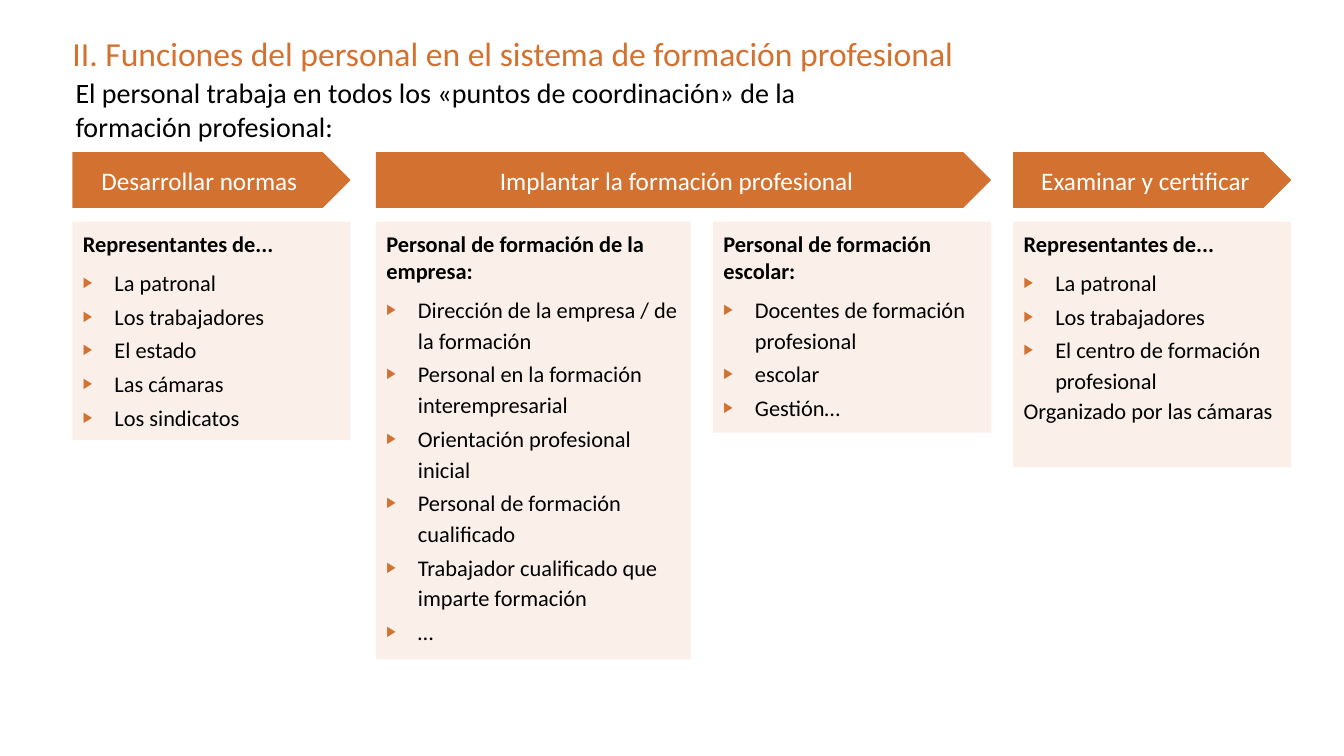
from dataclasses import dataclass

import pptx
import pptx.dml.color
import pptx.enum.shapes
import pptx.enum.text
import pptx.oxml
import pptx.oxml.ns
import pptx.util
from lxml import etree

PX = 9525  # EMU per px, 96 px to the inch
ANCHOR = pptx.enum.text.MSO_ANCHOR
ALIGN = pptx.enum.text.PP_ALIGN
AUTO_SIZE = pptx.enum.text.MSO_AUTO_SIZE


@dataclass(frozen=True)
class Theme:
    font: str = "Calibri"
    accent: str = "D37230"
    text: str = "000000"
    inverse: str = "FFFFFF"
    panel_alpha: int = 10
    title_size: int = 24
    subtitle_size: int = 20
    arrow_size: int = 18
    panel_size: int = 16
    list_spacing: int = 22
    bullet: str = "▶"
    bullet_percent: int = 65


THEME = Theme()

# Layout in px
LEFT = 69
ARROW_TOP, ARROW_HEIGHT = 145, 53
PANEL_TOP = 211
NARROW, WIDE = 265, 300
STAGE_GAP, GAP = 24, 21
COMPANY_LEFT = LEFT + NARROW + STAGE_GAP
SCHOOL_LEFT = COMPANY_LEFT + WIDE + GAP
EXAM_LEFT = SCHOOL_LEFT + NARROW + GAP
BULLET_INDENT = 30

# Left, width, label, left inset
ARROWS = [
    (LEFT, NARROW, "Desarrollar normas", 0),
    (COMPANY_LEFT, WIDE + GAP + NARROW, "Implantar la formación profesional", 10),
    (EXAM_LEFT, NARROW, "Examinar y certificar", 10),
]

# Left, width, height, heading, bullets, closing line
PANELS = [
    (LEFT, NARROW, 208, "Representantes de...",
     ["La patronal", "Los trabajadores", "El estado", "Las cámaras", "Los sindicatos"], None),
    (COMPANY_LEFT, WIDE, 417, "Personal de formación de la empresa:",
     ["Dirección de la empresa / de la formación",
      "Personal en la formación interempresarial",
      "Orientación profesional inicial",
      "Personal de formación cualificado",
      "Trabajador cualificado que imparte formación",
      "…"], None),
    (SCHOOL_LEFT, NARROW, 201, "Personal de formación escolar:",
     ["Docentes de formación profesional", "escolar", "Gestión…"], None),
    (EXAM_LEFT, NARROW, 234, "Representantes de...",
     ["La patronal", "Los trabajadores", "El centro de formación profesional"],
     "Organizado por las cámaras"),
]


def color(value):
    return pptx.dml.color.RGBColor.from_string(value)


def place(shape, box):
    shape.left, shape.top, shape.width, shape.height = (length * PX for length in box)


def set_frame(frame, insets, anchor):
    frame.word_wrap = True
    frame.auto_size = AUTO_SIZE.NONE
    frame.vertical_anchor = anchor
    (frame.margin_left, frame.margin_top,
     frame.margin_right, frame.margin_bottom) = (inset * PX for inset in insets)


def add_run(paragraph, text, size, text_color, bold=False):
    run = paragraph.add_run()
    run.text = text
    run.font.name = THEME.font
    run.font.size = pptx.util.Pt(size)
    run.font.bold = bold
    run.font.color.rgb = color(text_color)


def set_bullet(paragraph, visible):
    properties = paragraph._p.get_or_add_pPr()
    indent = BULLET_INDENT * PX if visible else 0
    properties.set("marL", str(indent))
    properties.set("indent", str(-indent))
    qn = pptx.oxml.ns.qn
    if not visible:
        etree.SubElement(properties, qn("a:buNone"))
        return
    bullet_color = etree.SubElement(properties, qn("a:buClr"))
    etree.SubElement(bullet_color, qn("a:srgbClr"), val=THEME.accent)
    etree.SubElement(properties, qn("a:buSzPct"), val=str(THEME.bullet_percent * 1000))
    etree.SubElement(properties, qn("a:buFont"), typeface=THEME.font)
    etree.SubElement(properties, qn("a:buChar"), char=THEME.bullet)


def add_title(slide, box, text):
    title = slide.shapes.title
    place(title, box)
    set_frame(title.text_frame, (0, 0, 0, 0), ANCHOR.TOP)
    paragraph = title.text_frame.paragraphs[0]
    paragraph.alignment = ALIGN.LEFT
    add_run(paragraph, text, THEME.title_size, THEME.accent)


def add_subtitle(slide, box, text):
    shape = slide.shapes.add_textbox(*(length * PX for length in box))
    set_frame(shape.text_frame, (10, 5, 10, 5), ANCHOR.TOP)
    add_run(shape.text_frame.paragraphs[0], text, THEME.subtitle_size, THEME.text)


def add_arrow(slide, box, label, left_inset):
    shape = slide.shapes.add_shape(
        pptx.enum.shapes.MSO_SHAPE.PENTAGON, *(length * PX for length in box))
    shape.shadow.inherit = False
    shape.fill.solid()
    shape.fill.fore_color.rgb = color(THEME.accent)
    shape.line.fill.background()
    set_frame(shape.text_frame, (left_inset, 5, 10, 5), ANCHOR.MIDDLE)
    paragraph = shape.text_frame.paragraphs[0]
    paragraph.alignment = ALIGN.CENTER
    add_run(paragraph, label, THEME.arrow_size, THEME.inverse)


def fill_panel(panel, box, heading, items, closing):
    place(panel, box)
    panel.fill.solid()
    panel.fill.fore_color.rgb = color(THEME.accent)
    tint = panel.fill._xPr.find(".//" + pptx.oxml.ns.qn("a:srgbClr"))
    etree.SubElement(tint, pptx.oxml.ns.qn("a:alpha"), val=str(THEME.panel_alpha * 1000))
    frame = panel.text_frame
    set_frame(frame, (10, 8, 10, 12), ANCHOR.TOP)

    # Text, whether bulleted, bold, space after
    lines = [(heading, False, True, 6)]
    lines += [(item, True, False, 2) for item in items]
    if closing:
        lines.append((closing, False, False, 2))
    for index, (text, bulleted, bold, space_after) in enumerate(lines):
        paragraph = frame.add_paragraph() if index else frame.paragraphs[0]
        set_bullet(paragraph, bulleted)
        paragraph.space_before = pptx.util.Pt(0)
        paragraph.space_after = pptx.util.Pt(space_after)
        paragraph.line_spacing = pptx.util.Pt(THEME.list_spacing) if bulleted else 1.0
        add_run(paragraph, text, THEME.panel_size, THEME.text, bold)


def main():
    presentation = pptx.Presentation()
    presentation.slide_width = 1280 * PX
    presentation.slide_height = 720 * PX
    # The comparison layout has a title and four body placeholders
    slide = presentation.slides.add_slide(
        presentation.slide_layouts.get_by_name("Comparison"))

    # Heading
    add_title(slide, (LEFT, 31, 945, 47),
              "II. Funciones del personal en el sistema de formación profesional")
    add_subtitle(slide, (62, 67, 790, 42),
                 "El personal trabaja en todos los «puntos de coordinación» "
                 "de la formación profesional:")

    # Staff lists
    for index, (left, width, height, heading, items, closing) in enumerate(PANELS, 1):
        fill_panel(slide.placeholders[index], (left, PANEL_TOP, width, height),
                   heading, items, closing)

    # Stages
    for left, width, label, left_inset in ARROWS:
        add_arrow(slide, (left, ARROW_TOP, width, ARROW_HEIGHT), label, left_inset)

    presentation.save("out.pptx")


if __name__ == "__main__":
    main()
